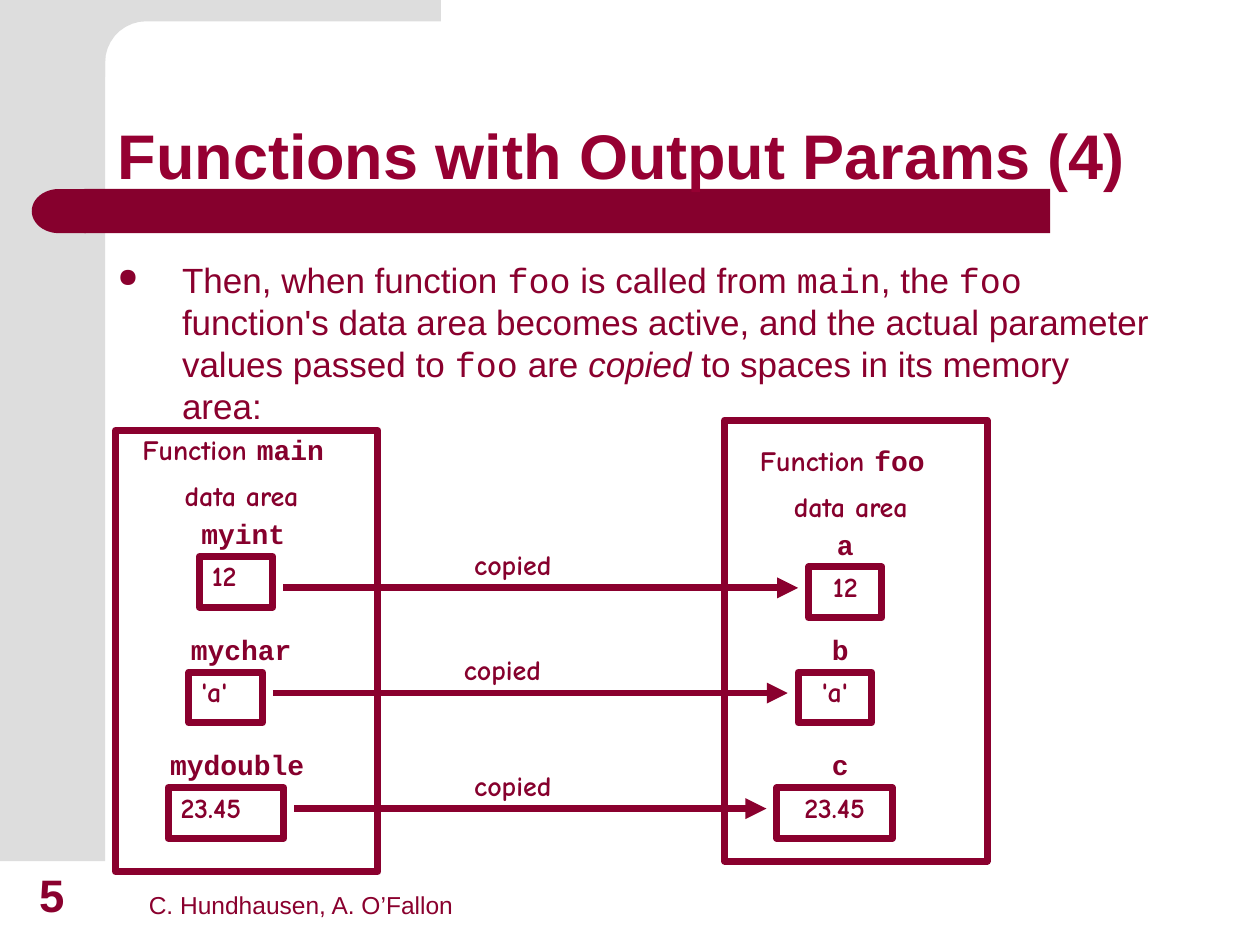
"""Builds the slide on how arguments are copied into a function's data area."""
import math

from lxml import etree
from pptx import Presentation
from pptx import util as u
from pptx.dml.color import RGBColor
from pptx.enum import shapes, text
from pptx.oxml.ns import qn

WHITE = RGBColor(0xFF, 0xFF, 0xFF)
GREY = RGBColor(0xDD, 0xDD, 0xDD)
BAR = RGBColor(0x86, 0x00, 0x2D)
WINE = RGBColor(0x8A, 0x00, 0x2E)
TITLE = RGBColor(0x96, 0x00, 0x32)

SANS, HAND, CODE = "Arial", "Comic Neue", "Courier New"
LEFT, CENTER = text.PP_ALIGN.LEFT, text.PP_ALIGN.CENTER
RECT = shapes.MSO_SHAPE.RECTANGLE
BOX_HEIGHT, LABEL_HEIGHT, LABEL_RISE, ARROW_GAP = 1.02, 0.86, 0.85, 0.21


class Deck:
    """Holds the style and the current slide."""

    def __init__(self):
        self.presentation = Presentation()
        self.presentation.slide_width = u.Cm(25.4)
        self.presentation.slide_height = u.Cm(19.05)
        self.slide = self.presentation.slides.add_slide(self.presentation.slide_layouts[5])
        self.slide.background.fill.solid()
        self.slide.background.fill.fore_color.rgb = WHITE

    def paint(self, shape, color):
        shape.shadow.inherit = False
        shape.fill.solid()
        shape.fill.fore_color.rgb = color
        shape.line.fill.background()

    def block(self, place, color, kind=RECT, rotation=0):
        shape = self.slide.shapes.add_shape(kind, *map(u.Cm, place))
        shape.rotation = rotation
        self.paint(shape, color)

    def corner(self, points, color):
        start, *rest = [(u.Cm(x), u.Cm(y)) for x, y in points]
        builder = self.slide.shapes.build_freeform(*start)
        builder.add_line_segments(rest)
        self.paint(builder.convert_to_shape(), color)

    def title(self, place, words):
        title = self.slide.shapes.title
        self.slide.shapes.element.append(title.element)
        title.left, title.top, title.width, title.height = map(u.Cm, place)
        self.fill_text(title, [[(words, SANS)]], 36, TITLE, bold=True,
                       anchor=text.MSO_ANCHOR.BOTTOM, spacing=0.9)

    def fill_text(self, shape, paragraphs, size, color, bold=False, align=LEFT,
                  anchor=text.MSO_ANCHOR.TOP, spacing=1.0):
        frame = shape.text_frame
        frame.word_wrap = True
        frame.auto_size = text.MSO_AUTO_SIZE.NONE
        frame.vertical_anchor = anchor
        for index, pieces in enumerate(paragraphs):
            paragraph = frame.add_paragraph() if index else frame.paragraphs[0]
            paragraph.alignment = align
            paragraph.line_spacing = spacing
            paragraph.space_before = u.Pt(9 if index else 0)
            for words, font, *italic in pieces:
                run = paragraph.add_run()
                run.text = words
                run.font.name = font
                run.font.size = u.Pt(size)
                run.font.bold = bold
                run.font.italic = bool(italic)
                run.font.color.rgb = color

    def textbox(self, place, paragraphs, size, color=WINE, **style):
        box = self.slide.shapes.add_textbox(*map(u.Cm, place))
        self.fill_text(box, paragraphs, size, color, **style)
        return box

    def bullet(self, place, pieces):
        box = self.textbox(place, [pieces], 20)
        properties = box.text_frame.paragraphs[0]._p.get_or_add_pPr()
        properties.set("marL", str(u.Cm(1.3)))
        properties.set("indent", str(u.Cm(-1.3)))
        color = etree.SubElement(properties, qn("a:buClr"))
        etree.SubElement(color, qn("a:srgbClr"), val=str(WINE))
        etree.SubElement(properties, qn("a:buSzPct"), val="75000")
        etree.SubElement(properties, qn("a:buChar"), char="●")

    def label(self, place, *paragraphs, align=LEFT):
        self.textbox(place, paragraphs, 16, BAR, bold=True, align=align, spacing=0.9)

    def frame(self, place, value="", align=LEFT):
        shape = self.slide.shapes.add_shape(RECT, *map(u.Cm, place))
        shape.shadow.inherit = False
        shape.fill.background()
        shape.line.color.rgb = WINE
        shape.line.width = u.Pt(4)
        if value:
            self.fill_text(shape, [[(value, HAND)]], 16, BAR, bold=True, align=align,
                           spacing=0.9)

    def arrow(self, start, end, y):
        line = self.slide.shapes.add_connector(
            shapes.MSO_CONNECTOR.STRAIGHT, u.Cm(start), u.Cm(y), u.Cm(end), u.Cm(y))
        line.line.color.rgb = WINE
        line.line.width = u.Pt(4)
        properties = line.element.spPr
        etree.SubElement(properties.get_or_add_ln(), qn("a:tailEnd"), type="triangle")
        etree.SubElement(properties, qn("a:effectLst"))

    def data_area(self, left, top, heading_top, function):
        self.frame((left, top, 5.29, 8.89))
        self.label((left + 0.21, heading_top, 4.66, 1.83),
                   [("Function ", HAND), (function + " ", CODE)],
                   [("data area", HAND)], align=CENTER)

    def variable(self, name, value, box, label_left, label_width, align):
        left, top, width = box
        self.label((label_left, top - LABEL_RISE, label_width, LABEL_HEIGHT),
                   [(name, CODE)], align=align)
        self.frame((left, top, width, BOX_HEIGHT), value, align)


def main():
    deck = Deck()
    deck.block((0, 0, 2.12, 17.36), GREY)
    angles = [math.radians(step * 10) for step in range(10)]
    curve = [(2.95 - 0.83 * math.sin(a), 1.26 - 0.83 * math.cos(a)) for a in angles]
    deck.corner([(1.27, 0), (8.89, 0), (8.89, 0.43), *curve, (2.12, 1.55), (1.27, 1.55)], GREY)
    deck.block((1.7, 3.81, 19.47, 0.89), BAR)
    deck.block((0.64, 3.81, 1.09, 0.89), BAR, shapes.MSO_SHAPE.FLOWCHART_DELAY, 180)

    deck.title((2.12, 0.85, 22.01, 3.17), "Functions with Output Params (4)")
    bottom = text.MSO_ANCHOR.BOTTOM
    deck.textbox((2.75, 17.36, 9.53, 1.31), [[("C. Hundhausen, A. O’Fallon", SANS)]], 14,
                 anchor=bottom)
    deck.textbox((0.23, 17.36, 1.63, 1.35), [[("5", SANS)]], 26, bold=True, align=CENTER,
                 anchor=bottom)
    deck.bullet((2.12, 5.08, 21.36, 3.18), [
        ("Then, when function ", SANS), ("foo", CODE), (" is called from ", SANS),
        ("main", CODE), (", the ", SANS), ("foo", CODE),
        (" function's data area becomes active, and the actual parameter values passed to ", SANS),
        ("foo", CODE), (" are ", SANS), ("copied", SANS, True),
        (" to spaces in its memory area:", SANS)])

    deck.data_area(2.33, 8.68, 8.68, "main")
    deck.data_area(14.61, 8.47, 8.89, "foo")

    copies = [
        ("myint", "a", "12", 4.02, 16.3, 1.48, 2.54, 16.09, 1.9, 0.21, 11.85, 9.31),
        ("mychar", "b", "'a'", 3.81, 16.09, 1.48, 2.96, 15.88, 2.12, 0, 13.97, 9.1),
        ("mydouble", "c", "23.45", 3.39, 15.66, 2.33, 3.81, 15.88, 2.12, 0, 16.3, 9.31),
    ]
    for row, (actual, formal, value, source, target, width, actual_width, formal_left,
              formal_width, drop, arrow_y, copied_left) in enumerate(copies):
        top = 11.22 + 2.33 * row
        deck.variable(actual, value, (source, top, width), source - 0.21, actual_width, LEFT)
        deck.variable(formal, value, (target, top + drop, width), formal_left, formal_width,
                      CENTER)
        deck.arrow(source + width + ARROW_GAP, target - ARROW_GAP, arrow_y)
        deck.label((copied_left, arrow_y - LABEL_HEIGHT, 3.18, LABEL_HEIGHT), [("copied", HAND)])

    deck.presentation.save("out.pptx")


if __name__ == "__main__":
    main()
